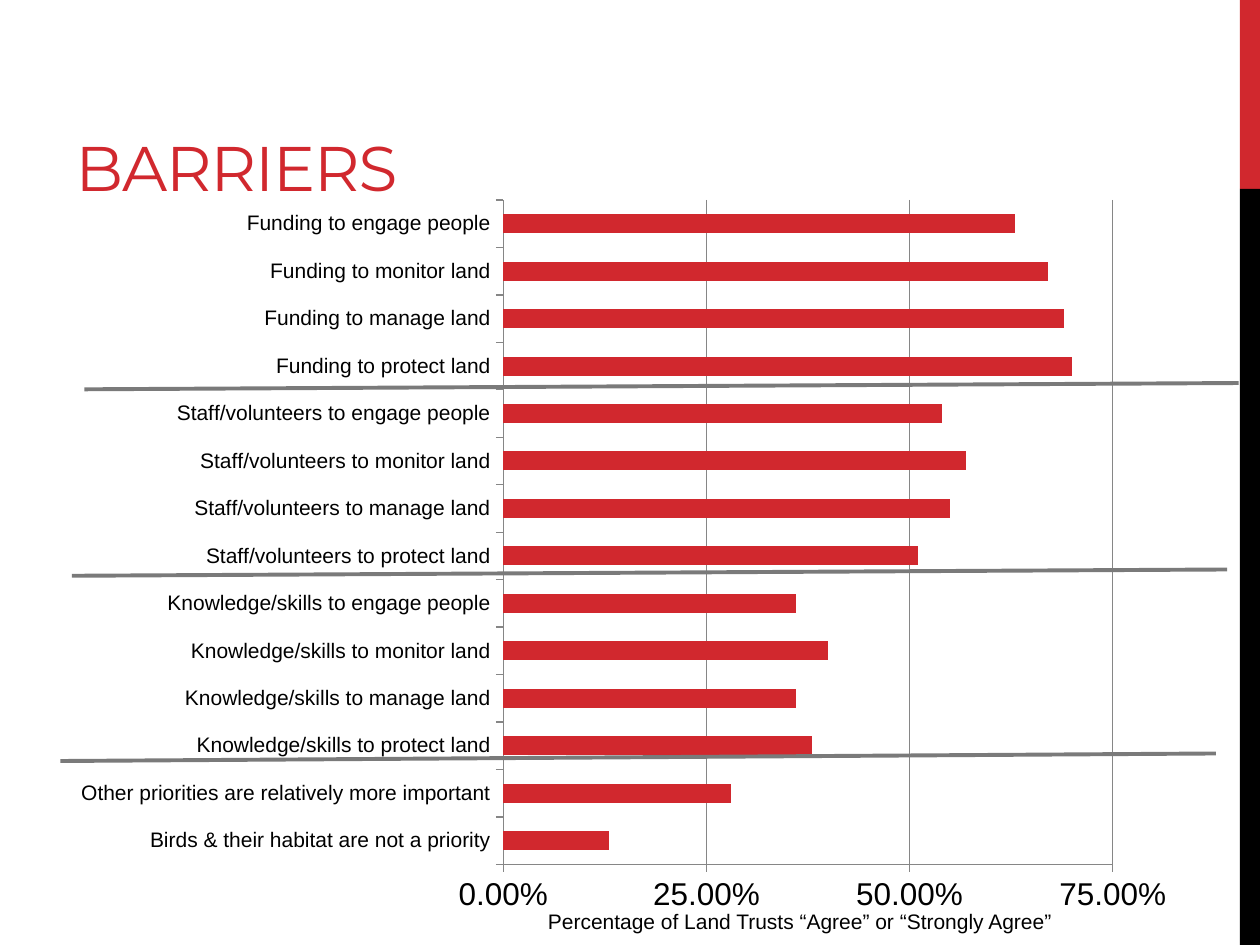
import pptx
import pptx.chart.data
import pptx.dml.color
import pptx.enum.chart
import pptx.enum.shapes
import pptx.enum.text
import pptx.util
import lxml.etree
from pptx.oxml.ns import qn
from pptx.util import Inches, Pt

RGBColor = pptx.dml.color.RGBColor
RED = RGBColor(0xD1, 0x28, 0x2E)
BLACK = RGBColor(0, 0, 0)
GREY = RGBColor(0x7A, 0x7A, 0x7A)
AXIS = RGBColor(0x86, 0x86, 0x86)

BARS = [
    ("Birds & their habitat are not a priority", 0.13),
    ("Other priorities are relatively more important", 0.28),
]
NEEDS = {
    "Knowledge/skills": (0.38, 0.36, 0.40, 0.36),
    "Staff/volunteers": (0.51, 0.55, 0.57, 0.54),
    "Funding": (0.70, 0.69, 0.67, 0.63),
}
GOALS = ("protect land", "manage land", "monitor land", "engage people")
RULES = [
    (0.48, 6.04, 9.65, 5.98),
    (0.67, 3.09, 9.83, 3.04),
    (0.57, 4.57, 9.74, 4.52),
]


def set_font(font, name, size, color):
    """Give a font its face, size and colour."""
    font.name, font.size = name, Pt(size)
    font.color.rgb = color


def add_band(slide, left, top, width, height, color):
    """Draw one plain block of the side band."""
    band = slide.shapes.add_shape(
        pptx.enum.shapes.MSO_SHAPE.RECTANGLE,
        Inches(left), Inches(top), Inches(width), Inches(height))
    band.shadow.inherit = False
    band.fill.solid()
    band.fill.fore_color.rgb = color
    band.line.fill.background()


def add_side(slide, left, top, width, height):
    """Draw the side band, one fifth red and the rest black."""
    part = height / 5
    add_band(slide, left, top, width, part, RED)
    add_band(slide, left, top + part, width, height - part, BLACK)


def set_title(slide, left, top, width, height):
    """Place and format the title."""
    title = slide.shapes.title
    title.left, title.top = Inches(left), Inches(top)
    title.width, title.height = Inches(width), Inches(height)
    frame = title.text_frame
    frame.text = "BARRIERS"
    frame.auto_size = pptx.enum.text.MSO_AUTO_SIZE.NONE
    frame.vertical_anchor = pptx.enum.text.MSO_ANCHOR.BOTTOM
    para = frame.paragraphs[0]
    para.alignment = pptx.enum.text.PP_ALIGN.LEFT
    set_font(para.font, "Montserrat", 36, RED)
    para.font._element.set("spc", "-60")


def set_plot(chart, **box):
    """Fix the inner plot area as fractions of the chart."""
    area = chart._chartSpace.chart.plotArea
    for old in area.findall(qn("c:layout")):
        area.remove(old)
    layout = lxml.etree.Element(qn("c:layout"))
    manual = lxml.etree.SubElement(layout, qn("c:manualLayout"))
    parts = {"layoutTarget": "inner", "xMode": "edge", "yMode": "edge", **box}
    for tag, val in parts.items():
        lxml.etree.SubElement(manual, qn("c:" + tag)).set("val", str(val))
    area.insert(0, layout)


def add_bars(shapes, left, top, width, height):
    """Draw the bar chart of barriers."""
    rows = BARS + [(f"{need} to {goal}", val)
                   for need, vals in NEEDS.items()
                   for goal, val in zip(GOALS, vals)]
    data = pptx.chart.data.CategoryChartData(number_format="0.00%")
    data.categories = [name for name, val in rows]
    data.add_series("Series 1", [val for name, val in rows])
    chart = shapes.add_chart(
        pptx.enum.chart.XL_CHART_TYPE.BAR_CLUSTERED,
        Inches(left), Inches(top), Inches(width), Inches(height), data).chart
    chart.has_legend = chart.has_title = False
    set_font(chart.font, "Arial", 18, BLACK)
    plot = chart.plots[0]
    plot.gap_width, plot.vary_by_categories = 150, False
    fill = plot.series[0].format.fill
    fill.solid()
    fill.fore_color.rgb = RED
    names, scale = chart.category_axis, chart.value_axis
    for axis, size in ((names, 12), (scale, 18)):
        axis.major_tick_mark = pptx.enum.chart.XL_TICK_MARK.OUTSIDE
        axis.minor_tick_mark = pptx.enum.chart.XL_TICK_MARK.NONE
        axis.format.line.color.rgb = AXIS
        set_font(axis.tick_labels.font, "Arial", size, BLACK)
    names.has_major_gridlines = False
    scale.has_major_gridlines = True
    scale.major_gridlines.format.line.color.rgb = AXIS
    scale.minimum_scale, scale.maximum_scale = 0, 0.75
    scale.major_unit = 0.25
    scale.tick_labels.number_format = "0.00%"
    scale.tick_labels.number_format_is_linked = False
    set_plot(chart, x=0.39, y=0.02, w=0.54, h=0.9)


def add_note(shapes, left, top, width, height):
    """Write the label under the value axis."""
    note = shapes.add_textbox(
        Inches(left), Inches(top), Inches(width), Inches(height))
    frame = note.text_frame
    frame.word_wrap = True
    frame.auto_size = pptx.enum.text.MSO_AUTO_SIZE.SHAPE_TO_FIT_TEXT
    frame.text = "Percentage of Land Trusts “Agree” or “Strongly Agree”"
    para = frame.paragraphs[0]
    para.alignment = pptx.enum.text.PP_ALIGN.CENTER
    set_font(para.font, "Arial", 12, BLACK)


def add_rule(slide, *ends):
    """Draw a line that parts two sets of bars."""
    rule = slide.shapes.add_connector(
        pptx.enum.shapes.MSO_CONNECTOR.STRAIGHT, *map(Inches, ends))
    rule.line.color.rgb = GREY
    rule.line.width = Pt(2.25)
    lxml.etree.SubElement(rule._element.spPr, qn("a:effectLst"))


def main():
    """Build the slide and save it."""
    deck = pptx.Presentation()
    deck.slide_width, deck.slide_height = Inches(10), Inches(7.5)
    slide = deck.slides.add_slide(deck.slide_layouts[5])
    add_side(slide, 9.84, 0, 0.16, 7.5)
    set_title(slide, 0.5, 0.17, 6.33, 1.5)
    group = slide.shapes.add_group_shape()
    add_bars(group.shapes, 0.5, 1.47, 8.96, 5.86)
    add_note(group.shapes, 4.06, 7.16, 4.58, 0.3)
    for ends in RULES:
        add_rule(slide, *ends)
    deck.save("out.pptx")


if __name__ == "__main__":
    main()
